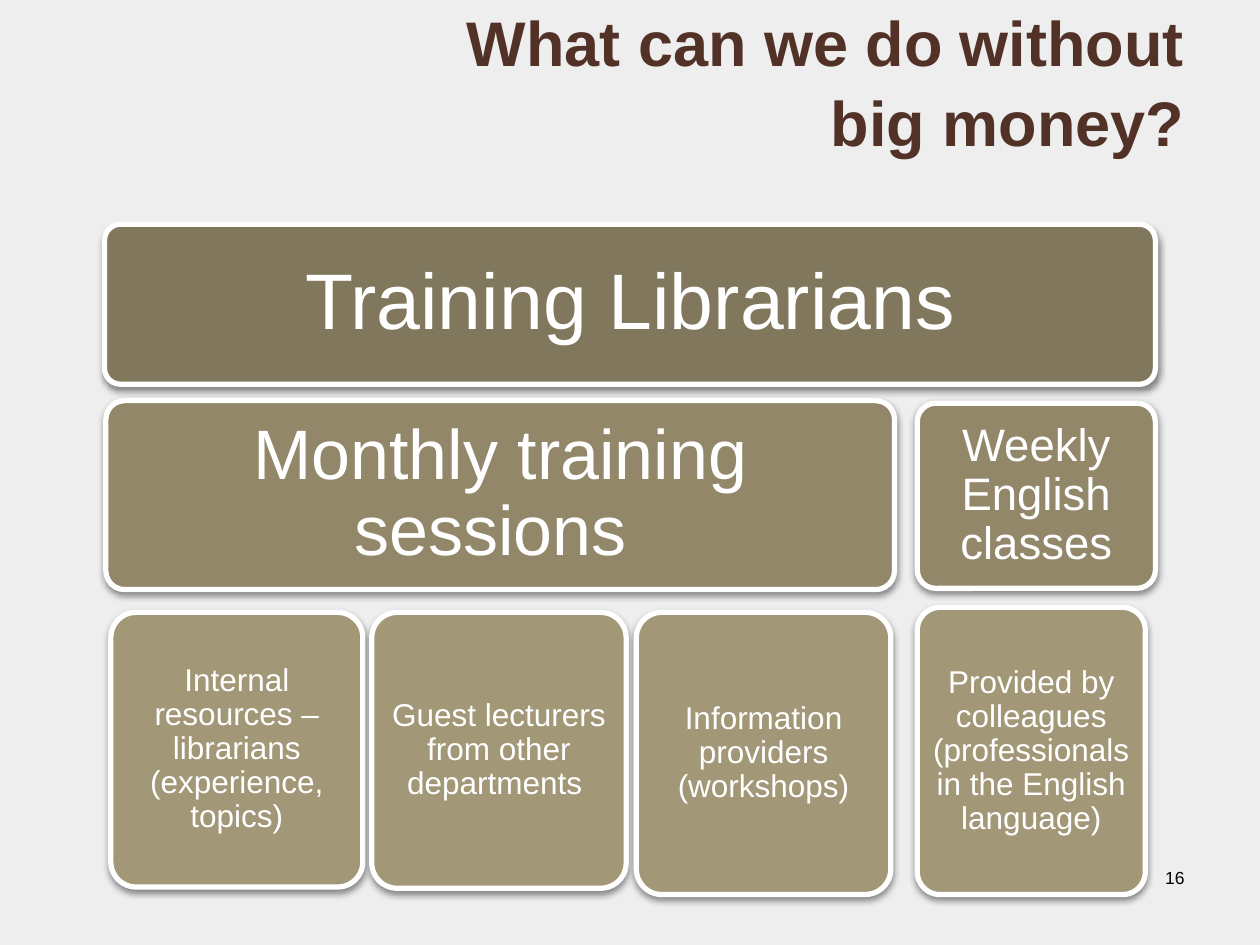
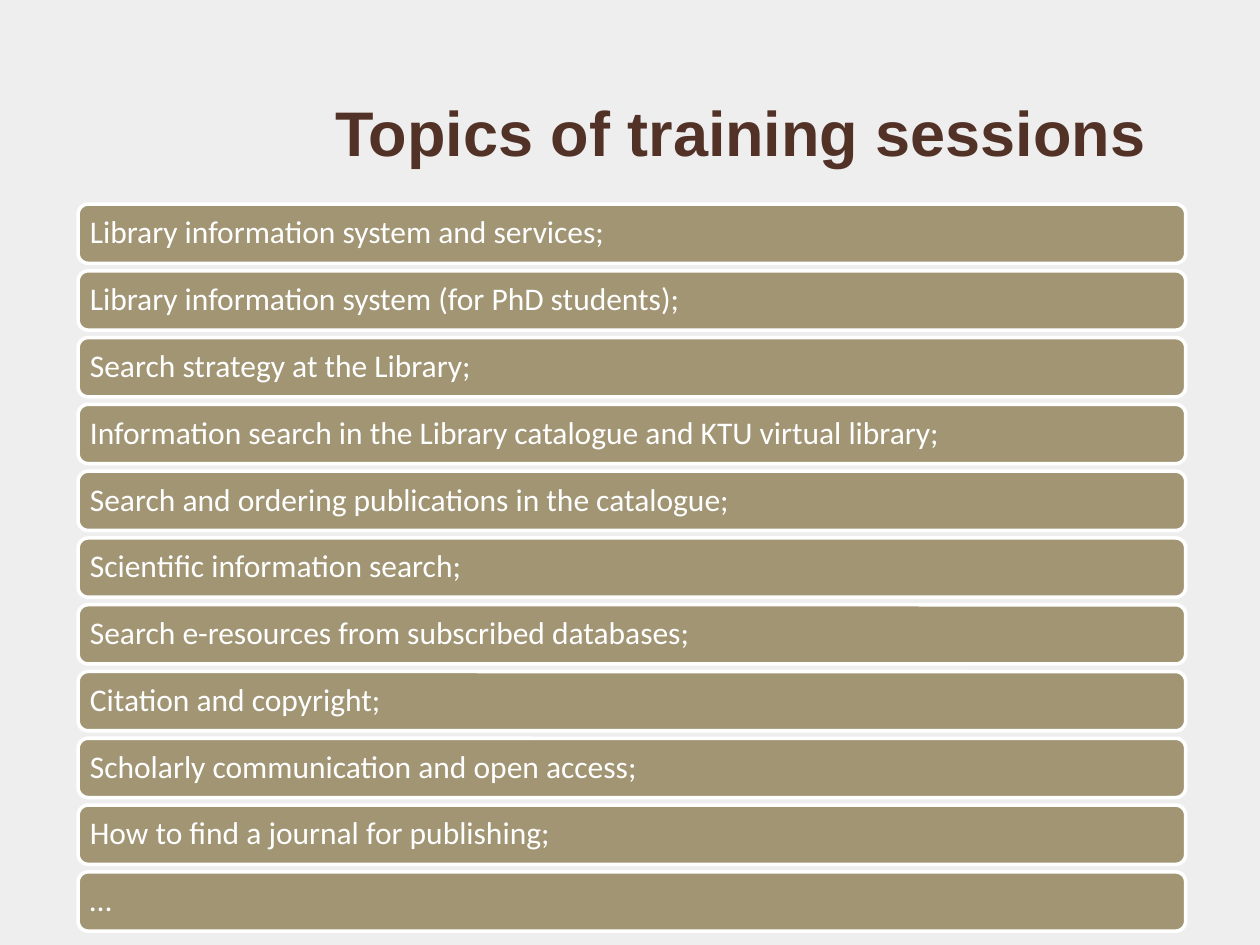
import pptx
import pptx.util
import pptx.dml.color
import pptx.enum.shapes
import pptx.enum.text
import pptx.oxml
from pptx.oxml.ns import nsdecls

Inches = pptx.util.Inches
ALIGN = pptx.enum.text.PP_ALIGN
ANCHOR = pptx.enum.text.MSO_ANCHOR

# Shared look
BACKGROUND = "EEEEEE"
TITLE_COLOUR = "523227"
WHITE = "FFFFFF"
BLACK = "000000"
BAR_FILL = "A19574"
LEVEL_FILLS = ["81775D", "928769", "A29777"]
TITLE_ONLY = 5

# Plan cards: level, (left, top, width, height) in the diagram, size, inset, text
PLAN_CARDS = [
    (0, (0, 0, 8.34, 1.27), 45, 0.19, "Training Librarians"),
    (1, (0.01, 1.4, 6.26, 1.5), 40, 0.17, "Monthly training sessions "),
    (1, (6.45, 1.42, 1.89, 1.47), 26, 0.11, "Weekly English classes"),
    (2, (0.05, 3.08, 2, 2.18), 18, 0.07,
     "Internal resources – librarians (experience, topics)"),
    (2, (2.12, 3.08, 2.02, 2.19), 18, 0.07,
     "Guest lecturers from other departments "),
    (2, (4.22, 3.08, 2.02, 2.24), 18, 0.07,
     "Information providers (workshops)"),
    (2, (6.45, 3.04, 1.81, 2.28), 18, 0.07,
     "Provided by colleagues (professionals in the English language)"),
]

TOPICS = [
    "Library information system and services;",
    "Library information system (for PhD students);",
    "Search strategy at the Library;",
    "Information search in the Library catalogue and KTU virtual library;",
    "Search and ordering publications in the catalogue;",
    "Scientific information search;",
    "Search e-resources from subscribed databases;",
    "Citation and copyright;",
    "Scholarly communication and open access;",
    "How to find a journal for publishing;",
    "…",
]


def rgb(colour):
    return pptx.dml.color.RGBColor.from_string(colour)


def apply(target, values):
    for name, value in values.items():
        setattr(target, name, value)


def write(shape, text, size, colour, align, anchor, font="Arial", bold=False,
          spacing=1.0, inset=None):
    """Fill a shape with one formatted paragraph."""
    frame = shape.text_frame
    apply(frame, {"text": text, "word_wrap": True, "vertical_anchor": anchor,
                  "auto_size": pptx.enum.text.MSO_AUTO_SIZE.NONE})
    if inset is not None:
        apply(frame, {f"margin_{side}": Inches(inset)
                      for side in ("left", "top", "right", "bottom")})
    paragraph = frame.paragraphs[0]
    apply(paragraph, {"alignment": align, "line_spacing": spacing})
    apply(paragraph.font, {"name": font, "size": pptx.util.Pt(size), "bold": bold})
    paragraph.font.color.rgb = rgb(colour)


def add_titled_slide(deck, title, box, align):
    slide = deck.slides.add_slide(deck.slide_layouts[TITLE_ONLY])
    heading = slide.shapes.title
    apply(heading, dict(zip(("left", "top", "width", "height"), map(Inches, box))))
    write(heading, title, 36, TITLE_COLOUR, align, ANCHOR.BOTTOM,
          bold=True, spacing=1.05)
    return slide


def add_card(slide, box, fill, outline, radius):
    """Rounded card with a white outline."""
    card = slide.shapes.add_shape(
        pptx.enum.shapes.MSO_SHAPE.ROUNDED_RECTANGLE, *map(Inches, box))
    card.adjustments[0] = radius
    card.shadow.inherit = False
    card.fill.solid()
    card.fill.fore_color.rgb = rgb(fill)
    card.line.color.rgb = rgb(WHITE)
    card.line.width = pptx.util.Pt(outline)
    return card


def drop_shadow(card):
    """Soft shadow just below the card."""
    effects = card._element.spPr.find(pptx.oxml.ns.qn("a:effectLst"))
    effects.append(pptx.oxml.parse_xml(
        f'<a:outerShdw {nsdecls("a")} blurRad="{pptx.util.Pt(4)}" '
        f'dist="{pptx.util.Pt(2)}" dir="5400000" rotWithShape="0">'
        f'<a:srgbClr val="{BLACK}"><a:alpha val="43000"/></a:srgbClr>'
        '</a:outerShdw>'))


def add_plan(slide, left, top):
    """Training plan: three levels of cards."""
    for level, (x, y, width, height), size, inset, text in PLAN_CARDS:
        card = add_card(slide, (left + x, top + y, width, height),
                        LEVEL_FILLS[level], 3, 0.1)
        drop_shadow(card)
        write(card, text, size, WHITE, ALIGN.CENTER, ANCHOR.MIDDLE,
              spacing=0.9, inset=inset)


def add_topics(slide, left, top, width, pitch=0.53, height=0.47):
    """Evenly spaced bars, one per topic."""
    for row, topic in enumerate(TOPICS):
        bar = add_card(slide, (left, top + row * pitch, width, height),
                       BAR_FILL, 2, 0.17)
        write(bar, topic, 18, WHITE, ALIGN.LEFT, ANCHOR.MIDDLE,
              font="Calibri", spacing=0.9, inset=0.07)


def add_page_number(slide, number):
    page = slide.shapes.add_textbox(*map(Inches, (7.17, 6.83, 2.33, 0.52)))
    write(page, number, 10, BLACK, ALIGN.RIGHT, ANCHOR.TOP)


def main():
    deck = pptx.Presentation()
    apply(deck, {"slide_width": Inches(10), "slide_height": Inches(7.5)})
    backdrop = deck.slide_master.background.fill
    backdrop.solid()
    backdrop.fore_color.rgb = rgb(BACKGROUND)

    # Training plan
    plan = add_titled_slide(deck, "What can we do without big money?",
                            (3.19, 0.39, 6.31, 0.92), ALIGN.RIGHT)
    add_page_number(plan, "16")
    add_plan(plan, 0.83, 1.78)

    # Session topics
    sessions = add_titled_slide(deck, "Topics of training sessions",
                                (2.56, 0.53, 6.94, 0.86), ALIGN.LEFT)
    add_topics(sessions, 0.62, 1.62, 8.79)

    deck.save("out.pptx")


if __name__ == "__main__":
    main()
